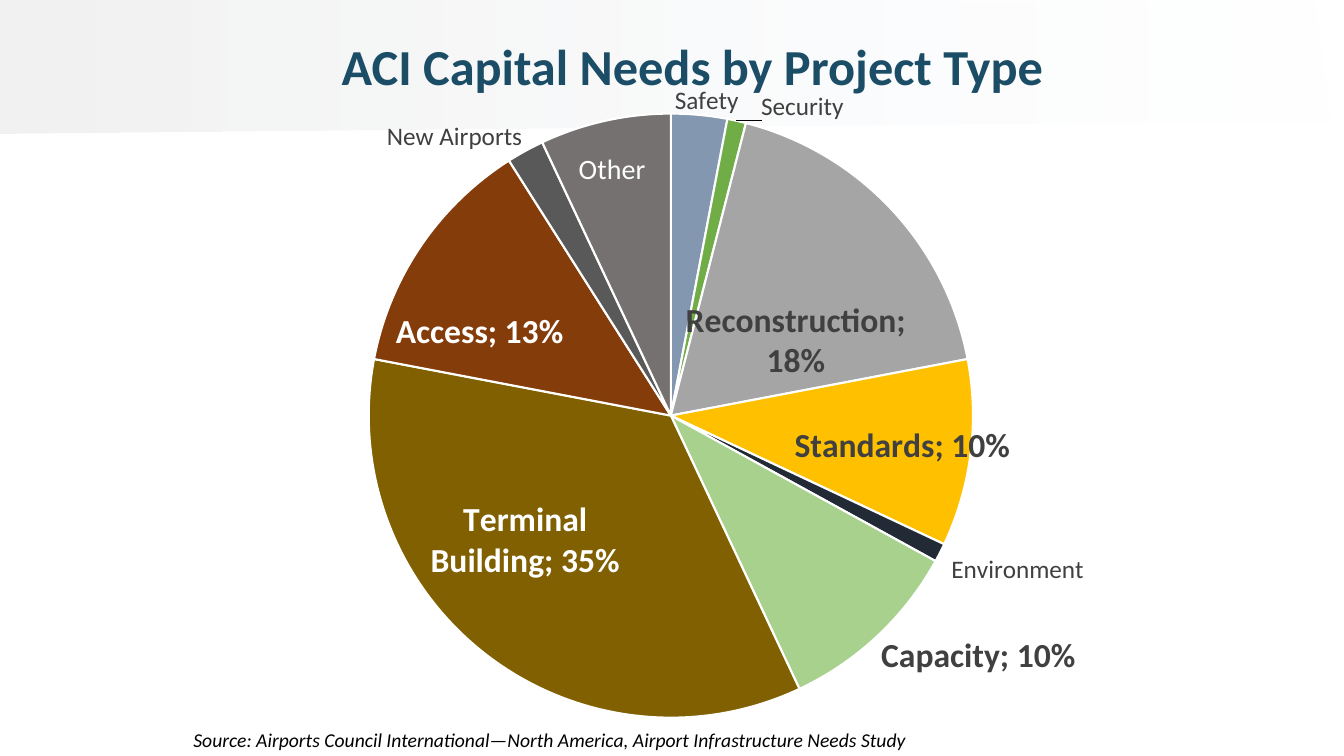
import math
from dataclasses import dataclass

import lxml.etree
import pptx
import pptx.chart.chart
import pptx.chart.data
import pptx.dml.color
import pptx.enum.chart
import pptx.enum.text
import pptx.oxml
import pptx.oxml.ns
import pptx.slide
import pptx.text.text
import pptx.util


@dataclass(frozen=True)
class Theme:
    font: str = "Calibri"
    title: str = "1C4D66"
    ink: str = "000000"
    label: str = "404040"
    white: str = "FFFFFF"
    band_start: str = "F2F2F2"
    band_end: str = "F7FAFD"
    title_size: int = 36
    major_size: int = 24
    medium_size: int = 20
    minor_size: int = 18
    source_size: int = 14


@dataclass(frozen=True)
class Area:
    """A rectangle in percent of its parent's width and height."""
    left: float
    top: float
    width: float
    height: float


@dataclass(frozen=True)
class Slice:
    """A project type; label_x and label_y are the label's centre in percent of the chart."""
    name: str
    value: float
    color: str
    label_x: float
    label_y: float
    label_size: int
    label_color: str
    major: bool = False


THEME = Theme()
WIDTH = pptx.util.Inches(13.33)
HEIGHT = pptx.util.Inches(7.5)
CHART_AREA = Area(11.1, 1.07, 80.87, 98.93)
PLOT_AREA = Area(20.2, 12.4, 55.6, 84.2)
TITLE_AREA = Area(11.1, 3.4, 80.87, 10.6)
SOURCE_AREA = Area(13.65, 95.6, 55.06, 4.53)
BAND_OUTLINE = [(0, 0), (0, 17.6), (98.95, 15.87), (97.82, 0.27), (46.36, 0)]

MAJOR, MEDIUM, MINOR = THEME.major_size, THEME.medium_size, THEME.minor_size
SLICES = [
    Slice("Safety", 0.03, "8497B0", 51.3, 11.5, MINOR, THEME.label),
    Slice("Security", 0.01, "70AD47", 60.1, 12.4, MINOR, THEME.label),
    Slice("Reconstruction", 0.18, "A5A5A5", 59.5, 44, MAJOR, THEME.label, True),
    Slice("Standards", 0.1, "FFC000", 69.3, 58.7, MAJOR, THEME.label, True),
    Slice("Environment", 0.01, "222A35", 79.9, 75.5, MINOR, THEME.label),
    Slice("Capacity", 0.1, "A9D18E", 76.3, 87.3, MAJOR, THEME.label, True),
    Slice("Terminal Building", 0.35, "806000", 34.6, 71.9, MAJOR, THEME.white, True),
    Slice("Access", 0.13, "843C0B", 30.4, 42.9, MAJOR, THEME.white, True),
    Slice("New Airports", 0.02, "595959", 28.1, 16.4, MINOR, THEME.label),
    Slice("Other", 0.07, "767171", 42.6, 20.7, MEDIUM, THEME.white),
]


def rgb(color: str) -> pptx.dml.color.RGBColor:
    return pptx.dml.color.RGBColor.from_string(color)


def across(percent: float) -> int:
    return round(WIDTH * percent / 100)


def down(percent: float) -> int:
    return round(HEIGHT * percent / 100)


def place(area: Area) -> tuple[int, int, int, int]:
    return across(area.left), down(area.top), across(area.width), down(area.height)


def format_font(font: pptx.text.text.Font, *, size: int, color: str,
                bold: bool = False, italic: bool = False) -> None:
    font.name = THEME.font
    font.size = pptx.util.Pt(size)
    font.bold = bold
    font.italic = italic
    font.color.rgb = rgb(color)


def write_text(frame: pptx.text.text.TextFrame, text: str, *, size: int, color: str,
               bold: bool = False, italic: bool = False, wrap: bool = True,
               align: pptx.enum.text.PP_ALIGN = pptx.enum.text.PP_ALIGN.LEFT) -> None:
    frame.word_wrap = wrap
    paragraph = frame.paragraphs[0]
    paragraph.alignment = align
    run = paragraph.add_run()
    run.text = text
    format_font(run.font, size=size, color=color, bold=bold, italic=italic)


def manual_layout(**values: str | float) -> lxml.etree._Element:
    """Build a chart layout element from its settings, in schema order."""
    settings = "".join(f'<c:{name} val="{value}"/>' for name, value in values.items())
    return pptx.oxml.parse_xml(
        f'<c:layout {pptx.oxml.ns.nsdecls("c")}>'
        f"<c:manualLayout>{settings}</c:manualLayout></c:layout>")


def draw_band(slide: pptx.slide.Slide) -> None:
    points = [(across(x), down(y)) for x, y in BAND_OUTLINE]
    builder = slide.shapes.build_freeform(*points[0], scale=1.0)
    builder.add_line_segments(points[1:], close=True)
    band = builder.convert_to_shape()
    band.shadow.inherit = False
    band.line.fill.background()
    band.fill.gradient()
    band.fill.gradient_angle = 0
    for stop, color in zip(band.fill.gradient_stops, (THEME.band_start, THEME.band_end)):
        stop.color.rgb = rgb(color)
    end_color = band.element.xpath(".//a:gs/a:srgbClr")[-1]
    lxml.etree.SubElement(end_color, pptx.oxml.ns.qn("a:alpha"), val="4000")
    slide.shapes.title.element.addprevious(band.element)


def place_plot(chart: pptx.chart.chart.Chart) -> None:
    """Fix the pie's area and make the chart's background transparent."""
    plot_area = chart.element.xpath("c:chart/c:plotArea")[0]
    for layout in plot_area.xpath("c:layout"):
        plot_area.remove(layout)
    plot_area.insert(0, manual_layout(
        layoutTarget="inner", xMode="edge", yMode="edge",
        x=PLOT_AREA.left / 100, y=PLOT_AREA.top / 100,
        w=PLOT_AREA.width / 100, h=PLOT_AREA.height / 100))
    chart.element.xpath("c:chart")[0].addnext(pptx.oxml.parse_xml(
        f'<c:spPr {pptx.oxml.ns.nsdecls("c", "a")}>'
        "<a:noFill/><a:ln><a:noFill/></a:ln></c:spPr>"))


def place_labels(chart: pptx.chart.chart.Chart) -> None:
    """Move each label from the middle of its slice to its own centre."""
    center_x = PLOT_AREA.left + PLOT_AREA.width / 2
    center_y = PLOT_AREA.top + PLOT_AREA.height / 2
    start = 0.0
    for index, item in enumerate(SLICES):
        angle = 2 * math.pi * (start + item.value / 2)
        start += item.value
        middle_x = center_x + PLOT_AREA.width / 4 * math.sin(angle)
        middle_y = center_y - PLOT_AREA.height / 4 * math.cos(angle)
        label = chart.element.xpath(f'.//c:dLbl[c:idx/@val="{index}"]')[0]
        label.xpath("c:idx")[0].addnext(manual_layout(
            x=round((item.label_x - middle_x) / 100, 4),
            y=round((item.label_y - middle_y) / 100, 4)))
        label.xpath("c:showVal")[0].set("val", str(int(item.major)))
        label.xpath("c:showCatName")[0].set("val", "1")
        separator = lxml.etree.SubElement(label, pptx.oxml.ns.qn("c:separator"))
        separator.text = "; "


def draw_pie(slide: pptx.slide.Slide) -> None:
    data = pptx.chart.data.CategoryChartData(number_format="0%")
    data.categories = [item.name for item in SLICES]
    data.add_series("Series 1", [item.value for item in SLICES])
    chart = slide.shapes.add_chart(
        pptx.enum.chart.XL_CHART_TYPE.PIE, *place(CHART_AREA), data).chart
    chart.has_title = False
    chart.has_legend = False
    format_font(chart.font, size=10, color=THEME.ink)
    chart.plots[0].vary_by_categories = True
    series = chart.plots[0].series[0]
    labels = series.data_labels
    labels.show_category_name = True
    labels.show_value = True
    labels.number_format = "0%"
    labels.number_format_is_linked = False
    format_font(labels.font, size=MAJOR, color=THEME.label, bold=True)
    for index, item in enumerate(SLICES):
        point = series.points[index]
        point.format.fill.solid()
        point.format.fill.fore_color.rgb = rgb(item.color)
        point.format.line.color.rgb = rgb(THEME.white)
        point.format.line.width = pptx.util.Pt(1.5)
        format_font(point.data_label.font, size=item.label_size,
                    color=item.label_color, bold=item.major)
        point.data_label.position = pptx.enum.chart.XL_LABEL_POSITION.CENTER
    place_plot(chart)
    place_labels(chart)


def main() -> None:
    presentation = pptx.Presentation()
    presentation.slide_width, presentation.slide_height = WIDTH, HEIGHT
    slide = presentation.slides.add_slide(presentation.slide_layouts.get_by_name("Title Only"))
    title = slide.shapes.title
    title.left, title.top, title.width, title.height = place(TITLE_AREA)
    write_text(title.text_frame, "ACI Capital Needs by Project Type", size=THEME.title_size,
               color=THEME.title, bold=True, align=pptx.enum.text.PP_ALIGN.CENTER)
    draw_band(slide)
    draw_pie(slide)
    source = slide.shapes.add_textbox(*place(SOURCE_AREA))
    write_text(source.text_frame,
               "Source: Airports Council International—North America, "
               "Airport Infrastructure Needs Study",
               size=THEME.source_size, color=THEME.ink, italic=True, wrap=False)
    presentation.save("out.pptx")


if __name__ == "__main__":
    main()
